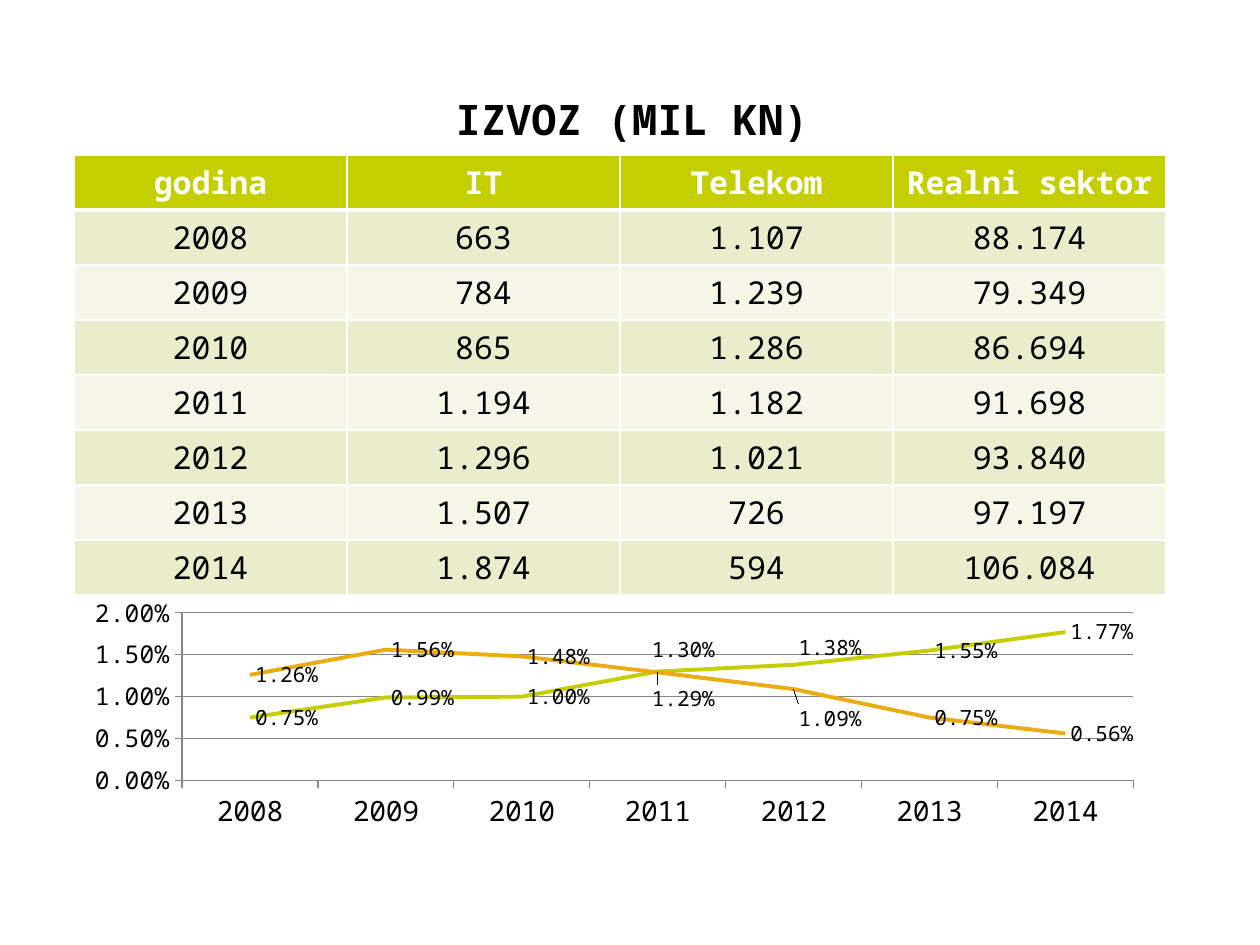
from lxml import etree
from pptx import Presentation, util as u
from pptx.chart.data import CategoryChartData
from pptx.dml.color import RGBColor
from pptx.enum import chart as ch, text as tx
from pptx.oxml import parse_xml
from pptx.oxml.ns import nsdecls, qn

BLACK = RGBColor(0, 0, 0)
WHITE = RGBColor(255, 255, 255)
LIME = RGBColor(0xC4, 0xCE, 0x00)
AMBER = RGBColor(0xEA, 0xAC, 0x10)
DARK = RGBColor(0xEA, 0xED, 0xCC)
LIGHT = RGBColor(0xF5, 0xF6, 0xE7)
GREY = RGBColor(0x86, 0x86, 0x86)
FACE = "Noto Sans Mono"

TITLE = "IZVOZ (MIL KN)"
HEAD = ("godina", "IT", "Telekom", "Realni sektor")
ROWS = [
    ("2008", "663", "1.107", "88.174"),
    ("2009", "784", "1.239", "79.349"),
    ("2010", "865", "1.286", "86.694"),
    ("2011", "1.194", "1.182", "91.698"),
    ("2012", "1.296", "1.021", "93.840"),
    ("2013", "1.507", "726", "97.197"),
    ("2014", "1.874", "594", "106.084"),
]
# name, colour, values, label shifts by point as shares of the chart size
LINES = [
    ("Series 1", LIME, (0.0075, 0.0099, 0.01, 0.013, 0.0138, 0.0155, 0.0177),
     {3: (-0.01, -0.09), 4: (0, -0.07)}),
    ("Series 2", AMBER, (0.0126, 0.0156, 0.0148, 0.0129, 0.0109, 0.0075, 0.0056),
     {3: (-0.01, 0.11), 4: (0, 0.12)}),
]
PLOT = {"x": 0.1, "y": 0.09, "w": 0.88, "h": 0.69}


def px(n):
    return u.Emu(round(n * 914400 / 126))


def style(font, size, color=BLACK, bold=False):
    form = {"name": FACE, "size": u.Pt(size), "bold": bold}
    for key, val in form.items():
        setattr(font, key, val)
    font.color.rgb = color


def write(frame, words, size, color, bold):
    para = frame.paragraphs[0]
    para.alignment = tx.PP_ALIGN.CENTER
    run = para.add_run()
    run.text = words
    style(run.font, size, color, bold)


def edge(cell, top, base):
    """Give a cell white borders; widths in points."""
    props = cell._tc.get_or_add_tcPr()
    for i, (side, wide) in enumerate(zip("LRTB", (1, 1, top, base))):
        props.insert(i, parse_xml(
            f'<a:ln{side} {nsdecls("a")} w="{u.Pt(wide)}"><a:solidFill>'
            f'<a:srgbClr val="{WHITE}"/></a:solidFill></a:ln{side}>'))


def layout(vals, inner=False):
    """Make a manual chart layout from x, y, w, h shares."""
    root = etree.Element(qn("c:layout"))
    man = etree.SubElement(root, qn("c:manualLayout"))
    items = [(key, val) for key, val in vals.items()]
    if inner:
        items = [("layoutTarget", "inner"), ("xMode", "edge"), ("yMode", "edge")] + items
    for key, val in items:
        etree.SubElement(man, qn("c:" + key)).set("val", str(val))
    return root


def add_title(slide):
    box = slide.shapes.add_textbox(px(74), px(78), px(1116), px(72))
    frame = box.text_frame
    form = {"word_wrap": True, "vertical_anchor": tx.MSO_ANCHOR.BOTTOM,
            "margin_left": 0, "margin_right": 0}
    for key, val in form.items():
        setattr(frame, key, val)
    write(frame, TITLE, 24, BLACK, True)


def add_grid(slide):
    rows = [HEAD] + ROWS
    grid = slide.shapes.add_table(len(rows), len(HEAD), px(74), px(155),
                                  px(273 * len(HEAD)), px(55 * len(rows))).table
    for r, row in enumerate(rows):
        for c, words in enumerate(row):
            cell = grid.cell(r, c)
            for side in ("left", "right", "top", "bottom"):
                setattr(cell, "margin_" + side, u.Inches(0.05))
            cell.fill.solid()
            cell.fill.fore_color.rgb = LIME if r == 0 else DARK if r % 2 else LIGHT
            write(cell.text_frame, words, 18, BLACK if r else WHITE, r == 0)
            edge(cell, 3 if r == 1 else 1, 3 if r == 0 else 1)


def add_lines(slide):
    data = CategoryChartData(number_format="0.00%")
    data.categories = [row[0] for row in ROWS]
    for name, _, vals, _ in LINES:
        data.add_series(name, vals)
    chart = slide.shapes.add_chart(ch.XL_CHART_TYPE.LINE, px(74), px(591),
                                   px(1081), px(243), data).chart
    chart.has_legend = chart.has_title = False
    style(chart.font, 18)

    area = chart._chartSpace.chart.plotArea
    for old in area.findall(qn("c:layout")):
        area.remove(old)
    area.insert(0, layout(PLOT, inner=True))

    for axis, size in ((chart.category_axis, 16), (chart.value_axis, 14)):
        style(axis.tick_labels.font, size)
        axis.major_tick_mark = ch.XL_TICK_MARK.OUTSIDE
        axis.format.line.color.rgb = GREY
    axis = chart.value_axis
    form = {"minimum_scale": 0, "maximum_scale": 0.02, "major_unit": 0.005,
            "has_major_gridlines": True}
    for key, val in form.items():
        setattr(axis, key, val)
    axis.major_gridlines.format.line.color.rgb = GREY
    axis.tick_labels.number_format = "0.00%"
    axis.tick_labels.number_format_is_linked = False

    for line, (_, color, _, moves) in zip(chart.plots[0].series, LINES):
        line.smooth = False
        line.format.line.color.rgb = color
        line.format.line.width = u.Pt(2.25)
        line.marker.style = ch.XL_MARKER_STYLE.NONE
        tags = line.data_labels
        form = {"show_value": True, "number_format": "0.00%",
                "number_format_is_linked": False,
                "position": ch.XL_LABEL_POSITION.RIGHT}
        for key, val in form.items():
            setattr(tags, key, val)
        style(tags.font, 12)
        for i, (x, y) in moves.items():
            tag = line.points[i].data_label
            tag.position = ch.XL_LABEL_POSITION.RIGHT
            style(tag.font, 12)
            tag._dLbl.insert(1, layout({"x": x, "y": y}))


def main():
    deck = Presentation()
    deck.slide_width, deck.slide_height = px(1260), px(945)
    slide = deck.slides.add_slide(deck.slide_layouts[6])
    add_title(slide)
    add_grid(slide)
    add_lines(slide)
    deck.save("out.pptx")


if __name__ == "__main__":
    main()
